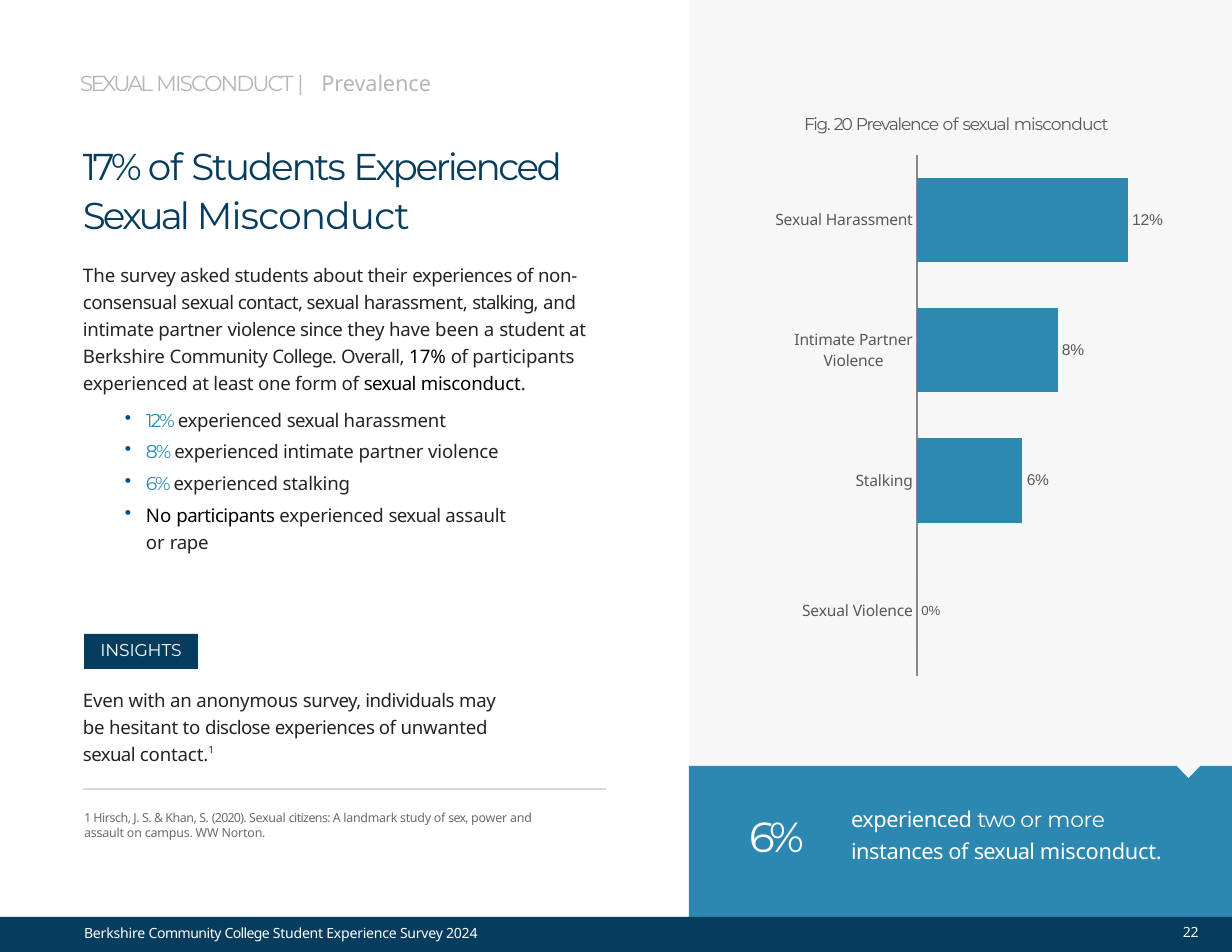
from lxml import etree
from pptx import Presentation
from pptx.chart.data import CategoryChartData
from pptx.dml.color import RGBColor
from pptx.enum.chart import XL_CHART_TYPE, XL_LABEL_POSITION, XL_TICK_MARK
from pptx.enum.shapes import MSO_CONNECTOR, MSO_SHAPE
from pptx.enum.text import MSO_ANCHOR, MSO_AUTO_SIZE, PP_ALIGN
from pptx.oxml.ns import qn
from pptx.util import Pt

RECTANGLE = MSO_SHAPE.RECTANGLE
DOWN_TRIANGLE = MSO_SHAPE.FLOWCHART_MERGE
OUTSIDE_END = XL_LABEL_POSITION.OUTSIDE_END
NO_TICKS = XL_TICK_MARK.NONE

PX = 914400 // 112
HEAD_FONT, BODY_FONT, LABEL_FONT = "Montserrat", "Noto Sans", "Arial"
NAVY = RGBColor(0x06, 0x3D, 0x5E)
BLUE = RGBColor(0x2C, 0x88, 0xB0)
BAR_BLUE = RGBColor(0x2D, 0x89, 0xB0)
PALE = RGBColor(0xF7, 0xF7, 0xF7)
WHITE = RGBColor(0xFF, 0xFF, 0xFF)
BLACK = RGBColor(0, 0, 0)
INK = RGBColor(0x24, 0x24, 0x24)
CHART_GREY = RGBColor(0x58, 0x58, 0x58)
NOTE_GREY = RGBColor(0x6C, 0x6C, 0x6C)
HEADING_GREY = RGBColor(0xB6, 0xB6, 0xB6)
AXIS_GREY = RGBColor(0x8A, 0x8A, 0x8A)
RULE_GREY = RGBColor(0xDA, 0xDA, 0xDA)


def write(paragraph, size, font, colour, runs):
    paragraph.font.size = Pt(size)
    paragraph.font.name = font
    paragraph.font.color.rgb = colour
    for text, spacing, *changes in runs:
        run = paragraph.add_run()
        run.text = text
        run.font._element.set("spc", str(round(spacing * 100)))
        for change in changes:
            if isinstance(change, RGBColor):
                run.font.color.rgb = change
            else:
                run.font.name = change


def place(shape, left, top, width, height):
    shape.left, shape.top = left * PX, top * PX
    shape.width, shape.height = width * PX, height * PX
    frame = shape.text_frame
    frame.margin_left = frame.margin_right = frame.margin_top = frame.margin_bottom = 0
    frame.word_wrap = True
    frame.auto_size = MSO_AUTO_SIZE.NONE
    frame.vertical_anchor = MSO_ANCHOR.TOP
    return frame


prs = Presentation()
prs.slide_width, prs.slide_height = 1232 * PX, 952 * PX
slide = prs.slides.add_slide(prs.slide_layouts[5])
shapes = slide.shapes

panels = []
for kind, left, top, width, height, colour in [
    (RECTANGLE, 689, 0, 543, 766, PALE),
    (RECTANGLE, 689, 766, 543, 151, BLUE),
    (DOWN_TRIANGLE, 1174, 763, 29, 15, PALE),
    (RECTANGLE, 0, 917, 1232, 35, NAVY),
    (RECTANGLE, 84, 634, 114, 35, NAVY),
]:
    panel = shapes.add_shape(kind, left * PX, top * PX, width * PX, height * PX)
    panel.shadow.inherit = False
    panel.fill.solid()
    panel.fill.fore_color.rgb = colour
    panel.line.fill.background()
    panels.append(panel)

insights = place(panels[-1], 84, 634, 114, 35)
insights.margin_bottom = 4 * PX
insights.vertical_anchor = MSO_ANCHOR.MIDDLE
insights.paragraphs[0].alignment = PP_ALIGN.CENTER
write(insights.paragraphs[0], 11, HEAD_FONT, WHITE, [("INSIGHTS", -0.1)])

headline = place(shapes.title, 83, 140, 540, 100).paragraphs[0]
headline.alignment = PP_ALIGN.LEFT
headline.line_spacing = 1.08
write(headline, 24, HEAD_FONT, NAVY, [
    ("17% ", -2.4), ("of ", -0.8), ("Students", -1.4), (" Experienced ", -1.6),
    ("Sexual ", -1.9), ("Misconduct", -0.5)])

for left, top, width, height, size, font, colour, spacing, lines in [
    (80, 70, 420, 30, 14, HEAD_FONT, HEADING_GREY, 1, [
        [("SEXUAL ", -1.8), ("MISCONDUCT ", -1.3), ("| ", 3.8),
         ("Prevalence", -0.1, BODY_FONT)]]),
    (804, 113, 350, 24, 11, HEAD_FONT, CHART_GREY, 1, [
        [("Fig. ", -0.9), ("20 ", -1.1), ("Prevalence ", -0.8), ("of ", -0.3),
         ("sexual", -0.8), (" misconduct", -0.6)]]),
    (83, 684, 430, 84, 12, BODY_FONT, INK, 1.21, [
        [("Even with an anonymous ", -0.15), ("survey, individuals ", -0.3),
         ("may be hesitant to ", -0.17), ("disclose ", -0.4), ("experiences of ", -0.3),
         ("unwanted ", -0.1), ("sexual ", -0.4), ("contact.", -0.1), ("1", -0.1)]]),
    (84, 810, 482, 32, 8, BODY_FONT, NOTE_GREY, 1, [
        [("1 Hirsch, J. S. & Khan, S. ", -0.3), ("(2020). ", -0.5), ("Sexual ", -0.2),
         ("citizens: A ", -0.4), ("landmark study of ", -0.2), ("sex, ", -0.5),
         ("power and assault on campus. WW Norton.", -0.15)]]),
    (749, 810, 90, 54, 27, HEAD_FONT, WHITE, 1, [[("6%", -3)]]),
    (851, 806, 350, 66, 14, BODY_FONT, WHITE, 1, [
        [("experienced ", -0.3), ("two ", -0.8, HEAD_FONT), ("or ", -0.4, HEAD_FONT),
         ("more", -0.2, HEAD_FONT)],
        [("instances of ", -0.3), ("sexual ", -0.5), ("misconduct.", -0.2)]]),
    (84, 925, 450, 24, 9, BODY_FONT, WHITE, 1, [
        [("Berkshire ", -0.1), ("Community ", -0.3), ("College ", -0.4),
         ("Student Experience Survey 2024", -0.15)]]),
    (1183, 924, 30, 24, 9, BODY_FONT, WHITE, 1, [[("22", -0.2)]]),
]:
    frame = place(shapes.add_textbox(0, 0, 0, 0), left, top, width, height)
    for i, runs in enumerate(lines):
        paragraph = frame.add_paragraph() if i else frame.paragraphs[0]
        paragraph.line_spacing = spacing
        if i:
            paragraph.space_before = Pt(3.5)
        write(paragraph, size, font, colour, runs)
        if runs[-1][0] == "1":
            paragraph.runs[-1].font.size = Pt(11)
            paragraph.runs[-1].font._element.set("baseline", "48000")

findings = place(shapes.add_textbox(0, 0, 0, 0), 83, 259, 540, 296)
findings.paragraphs[0].line_spacing = 1.21
write(findings.paragraphs[0], 12, BODY_FONT, INK, [
    ("The ", 0), ("survey asked students about their ", -0.2), ("experiences of ", -0.3),
    ("non-", -0.2), ("consensual ", -0.3), ("sexual contact, sexual ", -0.4),
    ("harassment, ", -0.3), ("stalking,", -0.6), (" and intimate partner ", -0.17),
    ("violence since ", -0.3), ("they have ", -0.15), ("been a ", 0), ("student at ", -0.2),
    ("Berkshire ", -0.1), ("Community ", -0.3), ("College. ", -0.5), ("Overall, ", -0.3),
    ("17% ", 0, BLACK), ("of ", -0.3), ("participants ", -0.1),
    ("experienced at least one form of ", -0.17), ("sexual ", -0.4, BLACK),
    ("misconduct", -0.1, BLACK), (".", -0.1)])

for space, line_spacing, runs in [
    (9, 1, [("12% ", -1.3, HEAD_FONT, BLUE), ("experienced ", -0.2), ("sexual ", -0.4),
            ("harassment", -0.1)]),
    (6, 1, [("8% ", -1.2, HEAD_FONT, BLUE), ("experienced intimate ", -0.2),
            ("partner violence", -0.1)]),
    (6, 1, [("6% ", -1.2, HEAD_FONT, BLUE), ("experienced ", -0.2), ("stalking", -0.1)]),
    (3, 1.21, [("No ", 0, BLACK), ("participants ", -0.3, BLACK), ("experienced ", -0.2),
               ("sexual ", -0.4), ("assault", -0.1)]),
]:
    bullet = findings.add_paragraph()
    bullet.space_before = Pt(space)
    bullet.line_spacing = line_spacing
    properties = bullet._p.get_or_add_pPr()
    properties.set("marL", str(63 * PX))
    properties.set("indent", str(-21 * PX))
    bullet_colour = etree.SubElement(properties, qn("a:buClr"))
    etree.SubElement(bullet_colour, qn("a:srgbClr"), val="004C97")
    etree.SubElement(properties, qn("a:buChar"), char="•")
    write(bullet, 12, BODY_FONT, INK, runs)
bullet.add_line_break()
write(bullet, 12, BODY_FONT, INK, [("or ", 0), ("rape", -0.2)])

rule = shapes.add_connector(MSO_CONNECTOR.STRAIGHT, 83 * PX, 789 * PX, 606 * PX, 789 * PX)
rule.line.color.rgb = RULE_GREY
rule.line.width = Pt(1)
etree.SubElement(rule._element.spPr, qn("a:effectLst"))

prevalence = CategoryChartData(number_format="0%")
prevalence.categories = ["Sexual Harassment", "Intimate Partner Violence", "Stalking", "Sexual Violence"]
prevalence.add_series("Prevalence", [0.12, 0.08, 0.06, 0])
chart_left, chart_top, chart_width, chart_height = 752, 145, 438, 540
chart = shapes.add_chart(XL_CHART_TYPE.BAR_CLUSTERED, chart_left * PX, chart_top * PX,
                         chart_width * PX, chart_height * PX, prevalence).chart
chart.has_title = chart.has_legend = False
chart.font.name = BODY_FONT
chart.font.size = Pt(10)
chart.font.color.rgb = CHART_GREY
categories, values = chart.category_axis, chart.value_axis
categories.reverse_order = True
categories.major_tick_mark = NO_TICKS
categories.format.line.color.rgb = AXIS_GREY
categories.format.line.width = Pt(0.75)
values.minimum_scale, values.maximum_scale = 0, 0.14
values.has_major_gridlines = values.visible = False

bars = chart.plots[0]
bars.gap_width = 55
bars.vary_by_categories = False
series = bars.series[0]
series.format.fill.solid()
series.format.fill.fore_color.rgb = BAR_BLUE
bars.has_data_labels = True
zero_label = series.points[3].data_label
for labels, size in [(bars.data_labels, 10), (series.data_labels, 10), (zero_label, 8.5)]:
    labels.position = OUTSIDE_END
    labels.font.name = LABEL_FONT
    labels.font.size = Pt(size)
    labels.font.color.rgb = CHART_GREY
bars.data_labels.show_value = series.data_labels.show_value = True

plot_area = chart._chartSpace.chart.plotArea
for old in plot_area.findall(qn("c:layout")):
    plot_area.remove(old)
layout = etree.Element(qn("c:layout"))
plot_area.insert(0, layout)
manual = etree.SubElement(layout, qn("c:manualLayout"))
for tag, value in [
    ("layoutTarget", "inner"), ("xMode", "edge"), ("yMode", "edge"),
    ("x", (917 - chart_left) / chart_width), ("y", (155 - chart_top) / chart_height),
    ("w", 246 / chart_width), ("h", 521 / chart_height),
]:
    etree.SubElement(manual, qn("c:" + tag), val=str(value))

prs.save("out.pptx")
